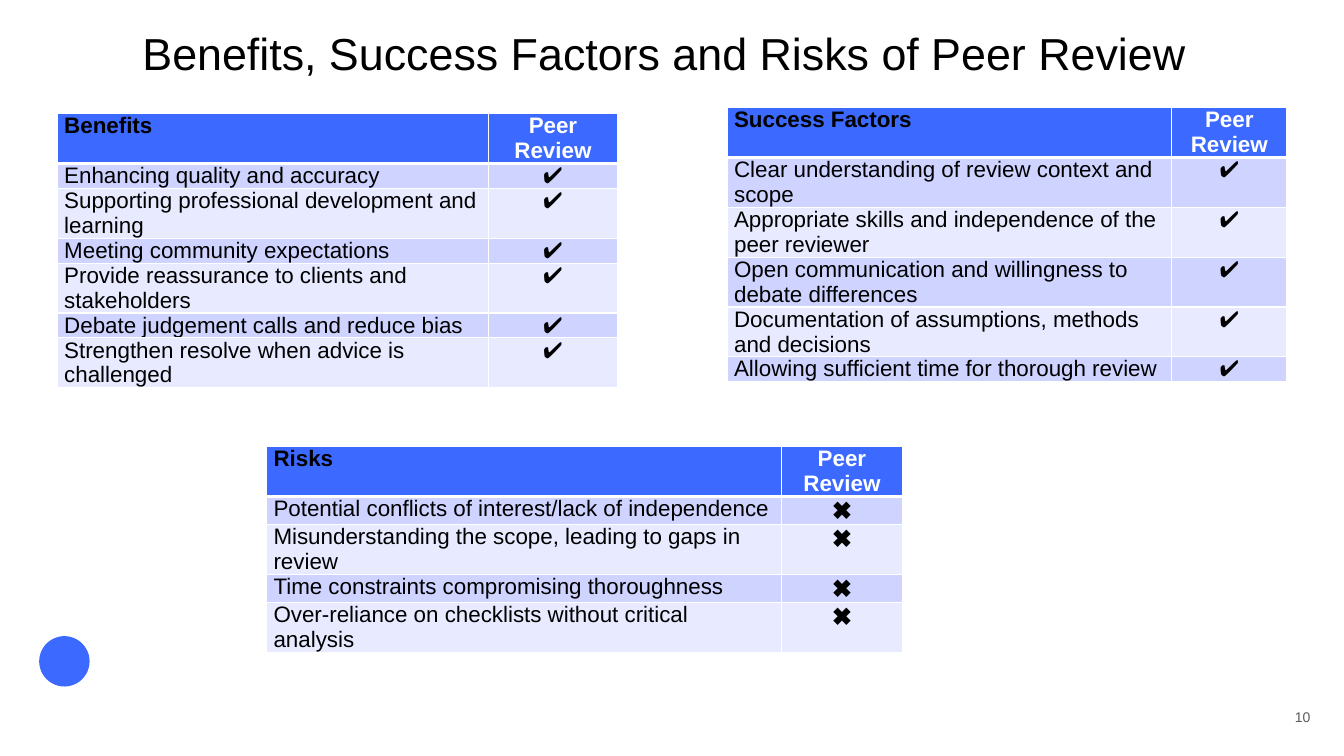
"""Build the slide on benefits, success factors and risks of peer review."""
import dataclasses

import pptx
import pptx.dml.color
import pptx.enum.shapes
import pptx.enum.text
import pptx.oxml
import pptx.oxml.ns
import pptx.util

Pt = pptx.util.Pt
ALIGN = pptx.enum.text.PP_ALIGN
ANCHOR = pptx.enum.text.MSO_ANCHOR
BLUE, BLACK, WHITE, GREY = "3C69FF", "000000", "FFFFFF", "5B5B5B"
BANDS = ("CED4FF", "E8EBFF")
MINIMUM_ROW = 5


@dataclasses.dataclass
class ReviewTable:
    heading: str
    left: float
    top: float
    widths: tuple[float, float]
    mark: str
    mark_size: float
    items: tuple[str, ...]


TABLES = (
    ReviewTable("Benefits", 40.9, 81.2, (308, 92.2), "✔", 16, (
        "Enhancing quality and accuracy",
        "Supporting professional development and learning",
        "Meeting community expectations",
        "Provide reassurance to clients and stakeholders",
        "Debate judgement calls and reduce bias",
        "Strengthen resolve when advice is challenged",
    )),
    ReviewTable("Success Factors", 519.4, 77, (317.4, 82.6), "✔", 16, (
        "Clear understanding of review context and scope",
        "Appropriate skills and independence of the peer reviewer",
        "Open communication and willingness to debate differences",
        "Documentation of assumptions, methods and decisions",
        "Allowing sufficient time for thorough review",
    )),
    ReviewTable("Risks", 190.4, 319, (367.8, 86.4), "✖", 18, (
        "Potential conflicts of interest/lack of independence",
        "Misunderstanding the scope, leading to gaps in review",
        "Time constraints compromising thoroughness",
        "Over-reliance on checklists without critical analysis",
    )),
)


def colour(value: str) -> pptx.dml.color.RGBColor:
    """Turn a hex string into a colour."""
    return pptx.dml.color.RGBColor.from_string(value)


def write(frame, text: str, size: float, ink: str, align, bold: bool = False):
    """Set the only paragraph of a text frame and format its span."""
    frame.text = text
    frame.word_wrap = True
    frame.margin_left = frame.margin_right = Pt(0)
    frame.margin_top = frame.margin_bottom = Pt(0)
    para = frame.paragraphs[0]
    para.alignment = align
    span = para.runs[0]
    span.font.name = "Arial"
    span.font.size = Pt(size)
    span.font.bold = bold
    span.font.color.rgb = colour(ink)
    return para


def add_borders(cell, bottom: float) -> None:
    """Give a cell white borders, with its own bottom width."""
    properties = cell._tc.get_or_add_tcPr()
    namespace = pptx.oxml.ns.nsdecls("a")
    widths = {"lnL": 1, "lnR": 1, "lnT": 1, "lnB": bottom}
    for position, (side, width) in enumerate(widths.items()):
        properties.insert(position, pptx.oxml.parse_xml(
            f'<a:{side} {namespace} w="{Pt(width)}"><a:solidFill>'
            f'<a:srgbClr val="{WHITE}"/></a:solidFill></a:{side}>'))


def add_review_table(page, review: ReviewTable) -> None:
    """Draw a two-column table whose rows grow to fit their text."""
    count = len(review.items) + 1
    table = page.shapes.add_table(
        count, 2, Pt(review.left), Pt(review.top),
        Pt(sum(review.widths)), Pt(MINIMUM_ROW * count)).table
    for column, width in zip(table.columns, review.widths):
        column.width = Pt(width)
    rows = [(review.heading, "Peer Review")]
    rows += [(item, review.mark) for item in review.items]
    for row_index, texts in enumerate(rows):
        header = row_index == 0
        fill = BLUE if header else BANDS[(row_index - 1) % 2]
        for column_index, text in enumerate(texts):
            second = column_index == 1
            cell = table.cell(row_index, column_index)
            size = review.mark_size if second and not header else 16
            para = write(cell.text_frame, text, size,
                         WHITE if header and second else BLACK,
                         ALIGN.CENTER if second else ALIGN.LEFT, header)
            para.space_before = para.space_after = Pt(3)
            cell.margin_left = cell.margin_right = Pt(5)
            cell.margin_top = cell.margin_bottom = Pt(0)
            cell.fill.solid()
            cell.fill.fore_color.rgb = colour(fill)
            add_borders(cell, 3 if header else 1)


def add_emblem(page) -> None:
    """Draw the plain disc in the lower left corner."""
    disc = page.shapes.add_shape(
        pptx.enum.shapes.MSO_SHAPE.OVAL, Pt(28), Pt(454.4), Pt(36), Pt(36))
    disc.shadow.inherit = False
    disc.fill.solid()
    disc.fill.fore_color.rgb = colour(BLUE)
    disc.line.fill.background()


def main() -> None:
    """Assemble and save the deck."""
    deck = pptx.Presentation()
    deck.slide_width, deck.slide_height = Pt(960), Pt(540)
    page = deck.slides.add_slide(deck.slide_layouts[5])
    add_emblem(page)
    title = page.shapes.title
    title.left, title.top = Pt(25.9), Pt(23)
    title.width, title.height = Pt(897.8), Pt(97.2)
    para = write(title.text_frame,
                 "Benefits, Success Factors and Risks of Peer Review",
                 32, BLACK, ALIGN.CENTER)
    para.line_spacing = 0.9
    title.text_frame.vertical_anchor = ANCHOR.TOP
    for review in TABLES:
        add_review_table(page, review)
    number = page.shapes.add_textbox(Pt(902.9), Pt(504), Pt(33.1), Pt(14.4))
    write(number.text_frame, "10", 10, GREY, ALIGN.RIGHT)
    number.text_frame.vertical_anchor = ANCHOR.BOTTOM
    deck.save("out.pptx")


if __name__ == "__main__":
    main()
